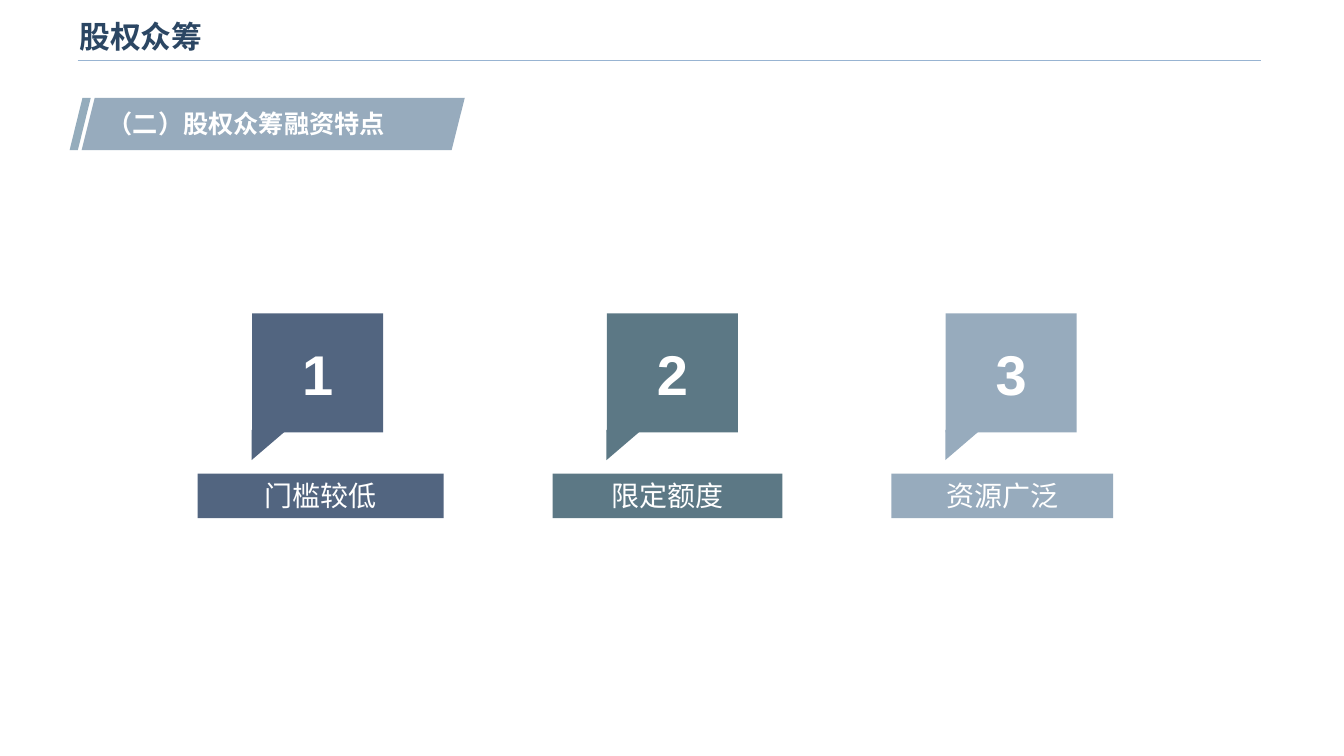
import dataclasses

import lxml.etree
import pptx
import pptx.dml.color
import pptx.enum.shapes
import pptx.enum.text
import pptx.oxml.ns
import pptx.util

SHAPE = pptx.enum.shapes.MSO_SHAPE
ANCHOR = pptx.enum.text.MSO_ANCHOR
ALIGN = pptx.enum.text.PP_ALIGN


@dataclasses.dataclass(frozen=True)
class Theme:
    latin: str = "Arial"
    chinese: str = "Noto Sans CJK SC"
    title: str = "2B4663"
    rule: str = "98B4D2"
    accent: str = "94ACBC"
    white: str = "FFFFFF"
    navy: str = "526580"
    teal: str = "5C7885"
    mist: str = "97ABBD"
    title_size: int = 22
    heading_size: int = 18
    number_size: int = 40
    label_size: int = 20


def px(length):
    return pptx.util.Emu(length * 9144)


def rgb(value):
    return pptx.dml.color.RGBColor.from_string(value)


class Page:
    def __init__(self, slide, theme):
        self.slide = slide
        self.theme = theme

    def rule(self, left, right, y):
        rule = self.slide.shapes.add_connector(
            pptx.enum.shapes.MSO_CONNECTOR.STRAIGHT, px(left), px(y), px(right), px(y))
        rule.line.color.rgb = rgb(self.theme.rule)
        rule.line.width = pptx.util.Pt(1)
        lxml.etree.SubElement(rule._element.spPr, pptx.oxml.ns.qn("a:effectLst"))

    def group(self):
        return self.slide.shapes.add_group_shape().shapes

    def block(self, preset, box, fill, shapes=None, adjust=None, rotation=0):
        target = self.slide.shapes if shapes is None else shapes
        block = target.add_shape(preset, *map(px, box))
        block.shadow.inherit = False
        block.fill.solid()
        block.fill.fore_color.rgb = rgb(fill)
        block.line.fill.background()
        block.rotation = rotation
        if adjust is not None:
            block.adjustments[0] = adjust
        return block

    def text_box(self, box):
        return self.slide.shapes.add_textbox(*map(px, box))

    def set_text(self, holder, words, size, color, bold=False, font=None,
                 align=ALIGN.LEFT, anchor=ANCHOR.TOP, grow=False):
        frame = holder.text_frame
        frame.text = words
        frame.word_wrap = True
        frame.vertical_anchor = anchor
        if grow:
            frame.auto_size = pptx.enum.text.MSO_AUTO_SIZE.SHAPE_TO_FIT_TEXT
        paragraph = frame.paragraphs[0]
        paragraph.alignment = align
        run = paragraph.runs[0]
        run.font.size = pptx.util.Pt(size)
        run.font.bold = bold
        run.font.color.rgb = rgb(color)
        run.font.name = font or self.theme.latin
        lxml.etree.SubElement(run.font._element, pptx.oxml.ns.qn("a:ea"),
                              typeface=self.theme.chinese)

    def title(self, words):
        self.set_text(self.text_box((69, 9, 1071, 53)), words, self.theme.title_size,
                      self.theme.title, bold=True, anchor=ANCHOR.MIDDLE)

    def heading(self, words):
        banner = self.group()
        self.block(SHAPE.PARALLELOGRAM, (69, 97, 21, 52), self.theme.accent, banner, 0.61)
        self.block(SHAPE.PARALLELOGRAM, (81, 97, 380, 52), self.theme.mist, banner, 0.25)
        self.set_text(self.text_box((97, 103, 336, 40)), words, self.theme.heading_size,
                      self.theme.white, bold=True, font=self.theme.chinese, grow=True)

    def feature(self, number, words, left, label_width, color):
        badge = self.group()
        self.block(SHAPE.ISOSCELES_TRIANGLE, (left + 56, 424, 30, 35), color, badge, 0, 90)
        square = self.block(SHAPE.RECTANGLE, (left + 54, 311, 130, 118), color, badge)
        self.set_text(square, str(number), self.theme.number_size, self.theme.white,
                      bold=True, align=ALIGN.CENTER, anchor=ANCHOR.MIDDLE)
        label = self.block(SHAPE.RECTANGLE, (left, 470, label_width, 44), color)
        self.set_text(label, words, self.theme.label_size, self.theme.white,
                      align=ALIGN.CENTER, grow=True)


def main():
    deck = pptx.Presentation()
    deck.slide_width, deck.slide_height = px(1333), px(750)
    theme = Theme()
    page = Page(deck.slides.add_slide(deck.slide_layouts[6]), theme)
    page.rule(77, 1251, 60)
    page.title("股权众筹")
    page.heading("（二）股权众筹融资特点")
    features = [
        ("门槛较低", 196, 244, theme.navy),
        ("限定额度", 548, 228, theme.teal),
        ("资源广泛", 884, 220, theme.mist),
    ]
    for number, feature in enumerate(features, 1):
        page.feature(number, *feature)
    deck.save("out.pptx")


if __name__ == "__main__":
    main()
